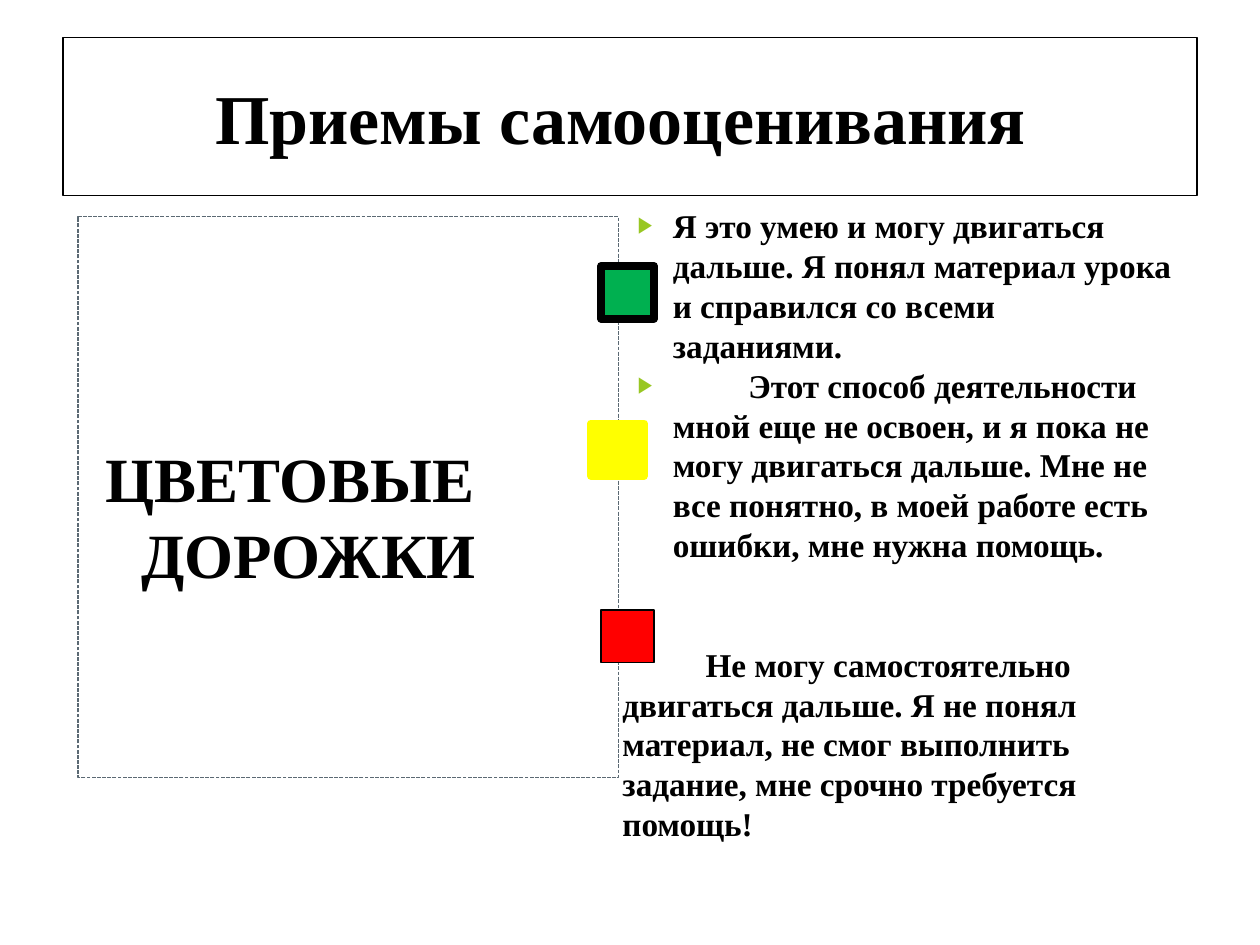
import pptx
import pptx.dml.color
import pptx.enum.dml
import pptx.enum.shapes
import pptx.enum.text
import pptx.oxml
import pptx.oxml.ns
import pptx.util
from pptx.util import Inches

COLORS = {
    "paper": "FFFFFF", "ink": "000000", "frame": "5B6973", "bullet": "98C723",
    "green": "00B050", "yellow": "FFFF00", "red": "FF0000",
}
FONT = "Times New Roman"
TITLE = "Приемы самооценивания"
METHOD = "ЦВЕТОВЫЕ ДОРОЖКИ"
# A tab opens the second statement; \v breaks a line inside a paragraph.
STATEMENTS = [
    "Я это умею и могу двигаться дальше. Я понял материал урока "
    "и справился со всеми\vзаданиями.",
    "\tЭтот способ деятельности мной еще не освоен, и я пока не могу двигаться "
    "дальше. Мне не все понятно, в моей работе есть ошибки, мне нужна помощь.",
    "Не могу самостоятельно двигаться дальше. Я не понял материал, "
    "не смог выполнить задание, мне срочно требуется помощь!",
]
# color, left, top, line color, line width in points
SQUARES = [
    ("green", 4.77, 2.11, "ink", 4.33),
    ("yellow", 4.69, 3.36, "yellow", 4.33),
    ("red", 4.77, 4.84, "ink", 0.75),
]


def rgb(name):
    return pptx.dml.color.RGBColor.from_string(COLORS[name])


def place(shape, left, top, width, height):
    shape.left, shape.top = Inches(left), Inches(top)
    shape.width, shape.height = Inches(width), Inches(height)


def set_line(shape, color, width):
    shape.line.color.rgb = rgb(color)
    shape.line.width = pptx.util.Pt(width)


def prepare_frame(shape, anchor, top=0.05, right=0.1):
    """Fix the insets and anchor of a text frame and return it."""
    frame = shape.text_frame
    frame.word_wrap = True
    frame.auto_size = pptx.enum.text.MSO_AUTO_SIZE.NONE
    frame.vertical_anchor = anchor
    frame.margin_left, frame.margin_right = Inches(0.1), Inches(right)
    frame.margin_top, frame.margin_bottom = Inches(top), Inches(0.05)
    return frame


def format_paragraph(para, size, before=0):
    para.line_spacing = 1.0
    para.space_before = pptx.util.Pt(before)
    for span in para.runs:
        span.font.name = FONT
        span.font.size = pptx.util.Pt(size)
        span.font.bold = True
        span.font.color.rgb = rgb("ink")


def set_indent(para, margin, first):
    properties = para._p.get_or_add_pPr()
    properties.set("marL", str(Inches(margin)))
    properties.set("indent", str(Inches(first)))


def add_marks(para, *marks):
    """Append bullet or tab elements, given as XML without namespace."""
    namespace = pptx.oxml.ns.nsdecls("a")
    for mark in marks:
        tag, rest = mark.split(" ", 1)
        para._p.get_or_add_pPr().append(
            pptx.oxml.parse_xml(f"<a:{tag} {namespace} {rest}"))


def build_title(shape, box):
    place(shape, *box)
    shape.fill.solid()
    shape.fill.fore_color.rgb = rgb("paper")
    set_line(shape, "ink", 0.75)
    frame = prepare_frame(shape, pptx.enum.text.MSO_ANCHOR.MIDDLE, right=0.25)
    frame.text = TITLE
    para = frame.paragraphs[0]
    para.alignment = pptx.enum.text.PP_ALIGN.CENTER
    format_paragraph(para, 40)


def build_method(shape, box):
    place(shape, *box)
    set_line(shape, "frame", 0.75)
    shape.line.dash_style = pptx.enum.dml.MSO_LINE.SQUARE_DOT
    frame = prepare_frame(shape, pptx.enum.text.MSO_ANCHOR.TOP, 1.77)
    frame.text = METHOD
    para = frame.paragraphs[0]
    format_paragraph(para, 36)
    set_indent(para, 0.4, -0.28)
    add_marks(para, "buNone />")


def build_statements(shape, box):
    place(shape, *box)
    frame = prepare_frame(shape, pptx.enum.text.MSO_ANCHOR.TOP)
    for index, statement in enumerate(STATEMENTS):
        para = frame.paragraphs[0] if index == 0 else frame.add_paragraph()
        para.text = statement
        bulleted = index < 2
        format_paragraph(para, 19, before=0 if bulleted else 45.5)
        if bulleted:
            set_indent(para, 0.4, -0.28)
            add_marks(para,
                      f'buClr ><a:srgbClr val="{COLORS["bullet"]}"/></a:buClr>',
                      'buSzPct val="68000"/>',
                      f'buFont typeface="{FONT}"/>',
                      'buChar char="▶"/>')
        else:
            set_indent(para, 0, 0.66)
            add_marks(para, "buNone />")
        if statement.startswith("\t"):
            add_marks(para, f'tabLst ><a:tab pos="{Inches(1)}" algn="l"/></a:tabLst>')


def add_square(page, color, left, top, line_color, line_width):
    side = Inches(0.42)
    square = page.shapes.add_shape(pptx.enum.shapes.MSO_SHAPE.RECTANGLE,
                                   Inches(left), Inches(top), side, side)
    square.shadow.inherit = False
    square.fill.solid()
    square.fill.fore_color.rgb = rgb(color)
    set_line(square, line_color, line_width)


def main():
    deck = pptx.Presentation()
    deck.slide_width, deck.slide_height = Inches(10), Inches(7.5)
    page = deck.slides.add_slide(deck.slide_layouts.get_by_name("Two Content"))
    title, method, statements = page.placeholders
    build_title(title, (0.5, 0.3, 9, 1.25))
    build_method(method, (0.62, 1.72, 4.29, 4.45))
    build_statements(statements, (4.84, 1.58, 4.66, 5.53))
    for square in SQUARES:
        add_square(page, *square)
    deck.save("out.pptx")


if __name__ == "__main__":
    main()
